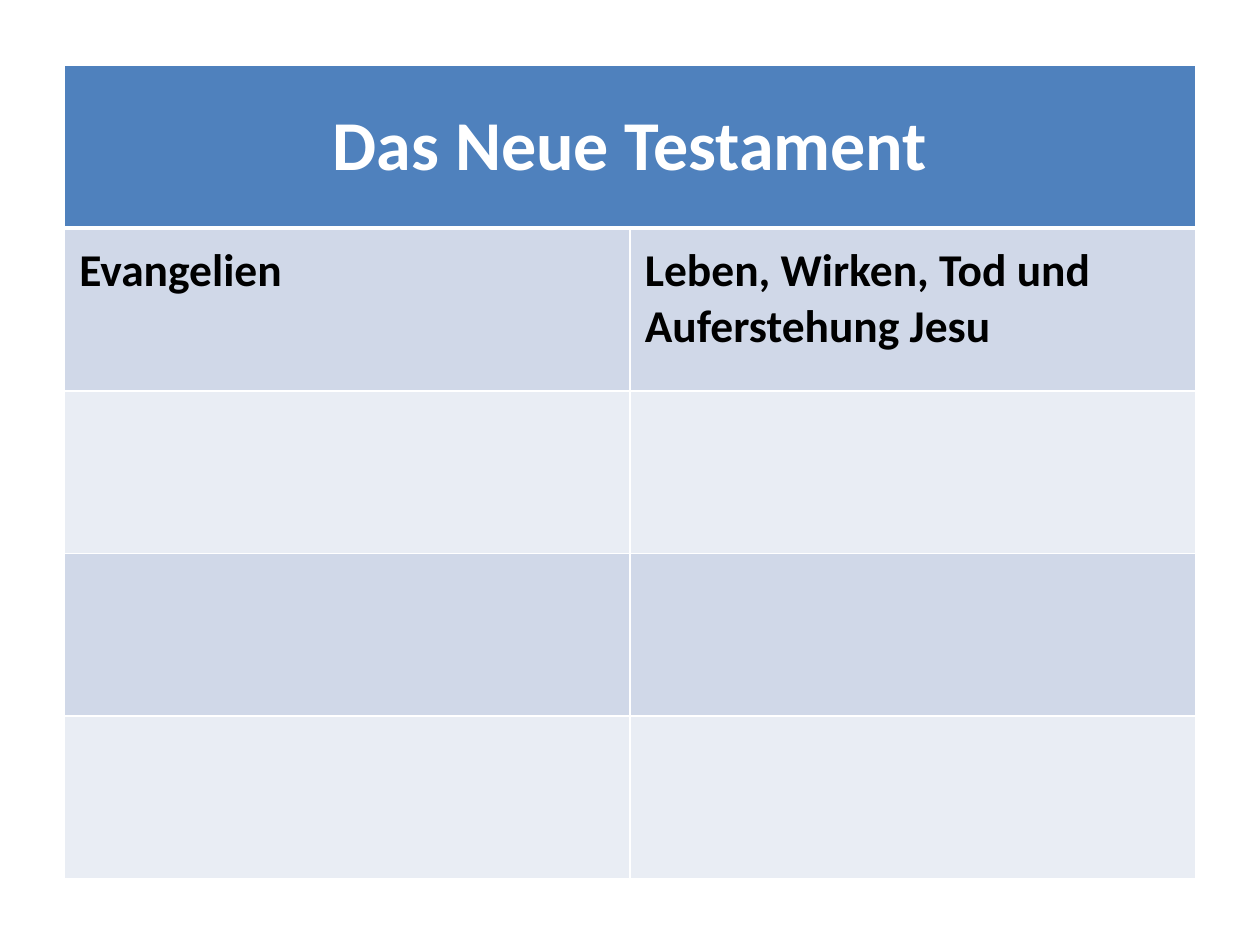
import dataclasses

import lxml.etree
import pptx
import pptx.dml.color
import pptx.enum.text
import pptx.oxml.ns
import pptx.util

Cm = pptx.util.Cm
Pt = pptx.util.Pt


@dataclasses.dataclass(frozen=True)
class Theme:
    font: str = "Calibri"
    heading_size: int = 40
    body_size: int = 26
    heading_fill: str = "4F81BD"
    heading_text: str = "FFFFFF"
    body_text: str = "000000"
    bands: tuple = ("D0D8E8", "E9EDF4")
    border: str = "FFFFFF"
    border_width: int = 1
    heading_rule: int = 3


class SlideBuilder:
    def __init__(self, theme, slide):
        self.theme = theme
        self.slide = slide

    def table(self, heading, entries, left, top, width, height):
        """Add a banded table under a heading that spans all columns."""
        theme = self.theme
        columns = len(entries[0])
        table = self.slide.shapes.add_table(
            len(entries) + 1, columns, left, top, width, height
        ).table

        for cell in table.rows[0].cells:
            self.style_cell(cell, theme.heading_fill, theme.heading_rule)
        heading_cell = table.cell(0, 0)
        heading_cell.merge(table.cell(0, columns - 1))
        heading_cell.vertical_anchor = pptx.enum.text.MSO_ANCHOR.MIDDLE
        self.fill_text(heading_cell, heading, theme.heading_size, theme.heading_text)
        heading_cell.text_frame.paragraphs[0].alignment = pptx.enum.text.PP_ALIGN.CENTER

        for row, texts in enumerate(entries, start=1):
            band = theme.bands[(row - 1) % len(theme.bands)]
            top_rule = theme.heading_rule if row == 1 else theme.border_width
            for column, text in enumerate(texts):
                cell = table.cell(row, column)
                self.style_cell(cell, band, theme.border_width, top_rule)
                cell.margin_left = cell.margin_top = Cm(0.3)
                cell.margin_right, cell.margin_bottom = Cm(0.4), Cm(0.2)
                self.fill_text(cell, text, theme.body_size, theme.body_text)

    def fill_text(self, cell, text, size, color):
        paragraph = cell.text_frame.paragraphs[0]
        paragraph.text = text
        font = paragraph.font
        font.name, font.size, font.bold = self.theme.font, Pt(size), True
        font.color.rgb = pptx.dml.color.RGBColor.from_string(color)

    def style_cell(self, cell, fill, bottom_rule, top_rule=None):
        """Set the borders first: they must precede the fill in the cell's XML."""
        qn = pptx.oxml.ns.qn
        side = self.theme.border_width
        widths = {"lnL": side, "lnR": side, "lnT": top_rule or side, "lnB": bottom_rule}
        properties = cell._tc.get_or_add_tcPr()
        for edge, width in widths.items():
            line = lxml.etree.SubElement(properties, qn(f"a:{edge}"), w=str(Pt(width)))
            solid = lxml.etree.SubElement(line, qn("a:solidFill"))
            lxml.etree.SubElement(solid, qn("a:srgbClr"), val=self.theme.border)
        cell.fill.solid()
        cell.fill.fore_color.rgb = pptx.dml.color.RGBColor.from_string(fill)


def main():
    presentation = pptx.Presentation()
    presentation.slide_width, presentation.slide_height = Cm(25.4), Cm(19.05)
    slide = presentation.slides.add_slide(presentation.slide_layouts[6])

    testament_parts = [
        ("Evangelien", "Leben, Wirken, Tod und Auferstehung Jesu"),
        ("", ""),
        ("", ""),
        ("", ""),
    ]
    SlideBuilder(Theme(), slide).table(
        "Das Neue Testament", testament_parts, Cm(1.3), Cm(1.32), Cm(22.8), Cm(16.4)
    )
    presentation.save("out.pptx")


if __name__ == "__main__":
    main()
